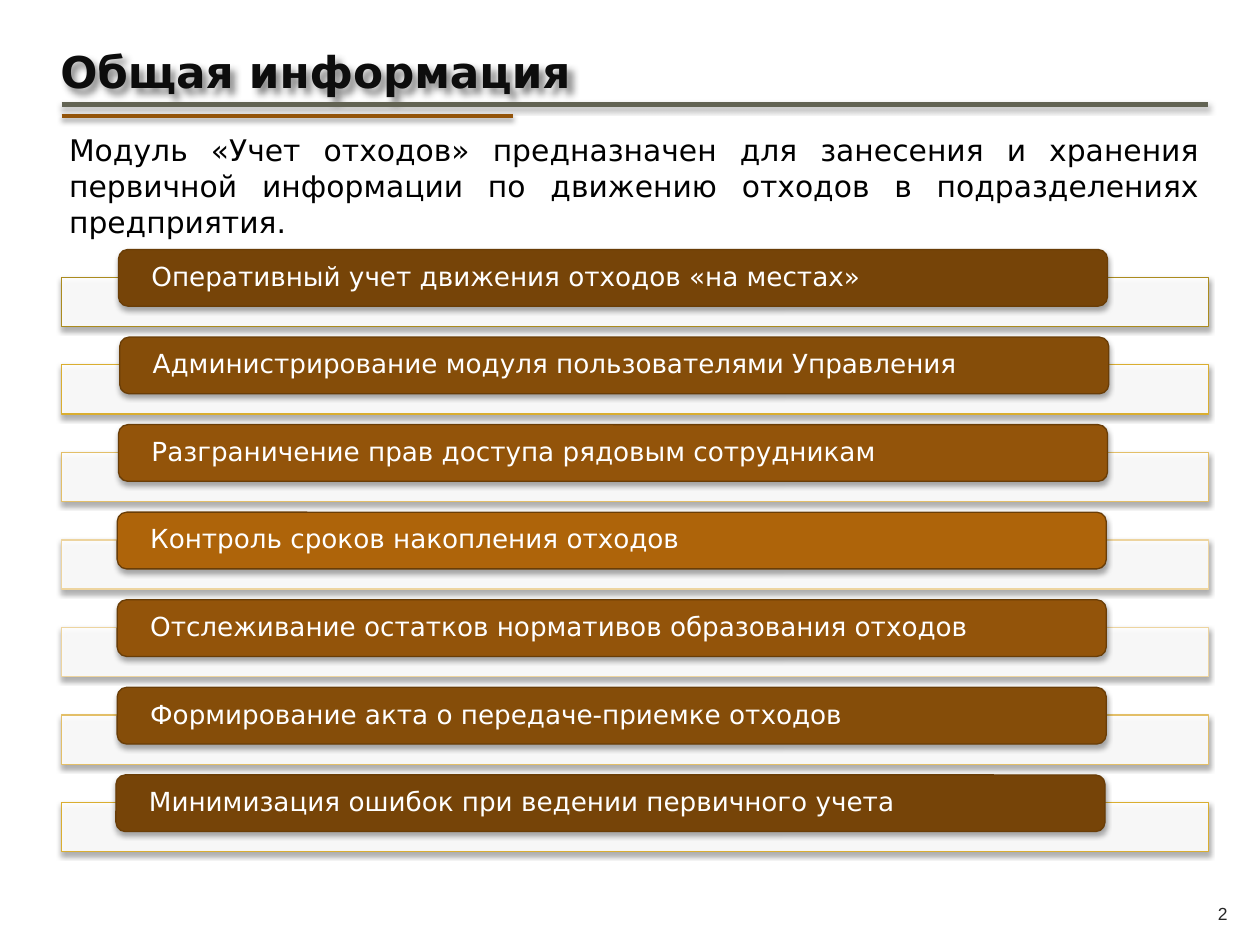
from dataclasses import dataclass

from lxml.etree import SubElement
from pptx import Presentation
from pptx.dml.color import RGBColor
from pptx.enum.shapes import MSO_CONNECTOR, MSO_SHAPE
from pptx.enum.text import MSO_ANCHOR, PP_ALIGN
from pptx.oxml.ns import qn
from pptx.util import Inches, Pt


@dataclass(frozen=True)
class Theme:
    font: str = "DejaVu Sans"
    number_font: str = "Arial"
    title_size: float = 25
    intro_size: float = 17
    row_size: float = 15
    number_size: float = 10
    title: str = "0D0D0D"
    text: str = "000000"
    number: str = "262626"
    white: str = "FFFFFF"
    long_rule: str = "626353"
    short_rule: str = "93540A"
    bar_edge: str = "693D07"
    # From the outer rows to the middle one
    bars: tuple = ("764408", "854D09", "93540A", "AE640A")
    # From the first row to the last one
    tray_edges: tuple = ("AB8B1E", "DAAE30", "E3BF68", "EDD49F",
                         "EDD49F", "E3BF68", "DAAE30")


@dataclass(frozen=True)
class Box:
    """An area of the page, in inches."""
    left: float
    top: float
    width: float
    height: float

    def emu(self):
        return [Inches(v) for v in (self.left, self.top, self.width, self.height)]


THEME = Theme()

# Each row: its text and the left edge of its bar
ROWS = [
    ("Оперативный учет движения отходов «на местах»", 0.94),
    ("Администрирование модуля пользователями Управления", 0.95),
    ("Разграничение прав доступа рядовым сотрудникам", 0.94),
    ("Контроль сроков накопления отходов", 0.93),
    ("Отслеживание остатков нормативов образования отходов", 0.93),
    ("Формирование акта о передаче-приемке отходов", 0.93),
    ("Минимизация ошибок при ведении первичного учета", 0.92),
]


def add_shadow(shape, angle=90, alpha=35, blur=3.1, distance=1.8):
    """Give a shape or connector a soft black shadow."""
    properties = shape._element.spPr
    effects = properties.find(qn("a:effectLst"))
    if effects is None:
        effects = SubElement(properties, qn("a:effectLst"))
    outer = SubElement(effects, qn("a:outerShdw"), {
        "blurRad": str(Pt(blur)), "dist": str(Pt(distance)),
        "dir": str(angle * 60000), "rotWithShape": "0"})
    color = SubElement(outer, qn("a:srgbClr"), val="000000")
    SubElement(color, qn("a:alpha"), val=str(alpha * 1000))


def write(shape, text, size, color, font=THEME.font, bold=False,
          align=PP_ALIGN.LEFT, line_spacing=None, **frame_format):
    frame = shape.text_frame
    for name, value in {"word_wrap": True, **frame_format}.items():
        setattr(frame, name, value)
    para = frame.paragraphs[0]
    para.alignment = align
    if line_spacing:
        para.line_spacing = line_spacing
    span = para.add_run()
    span.text = text
    for name, value in {"name": font, "size": Pt(size), "bold": bold}.items():
        setattr(span.font, name, value)
    span.font.color.rgb = RGBColor.from_string(color)


def add_panel(page, kind, box, fill, edge):
    shape = page.shapes.add_shape(kind, *box.emu())
    shape.fill.solid()
    shape.fill.fore_color.rgb = RGBColor.from_string(fill)
    shape.line.color.rgb = RGBColor.from_string(edge)
    shape.line.width = Pt(0.75)
    shape.shadow.inherit = False
    add_shadow(shape)
    return shape


def add_rule(page, left, top, width, color, weight):
    rule = page.shapes.add_connector(
        MSO_CONNECTOR.STRAIGHT, Inches(left), Inches(top),
        Inches(left + width), Inches(top))
    rule.line.color.rgb = RGBColor.from_string(color)
    rule.line.width = Pt(weight)
    add_shadow(rule)


def add_header(page, box, title):
    # Title with a shadow on its letters
    title_box = Box(box.left - 0.11, box.top, box.width / 2, 0.52)
    shape = page.shapes.add_textbox(*title_box.emu())
    write(shape, title, THEME.title_size, THEME.title, bold=True, word_wrap=False)
    add_shadow(shape, angle=45, alpha=45, blur=4, distance=4)
    # Two rules under the title
    bottom = box.top + box.height
    add_rule(page, box.left, bottom - 0.09, box.width, THEME.long_rule, 3)
    add_rule(page, box.left, bottom, 3.58, THEME.short_rule, 2.5)


def add_intro(page, box, text):
    shape = page.shapes.add_textbox(*box.emu())
    write(shape, text, THEME.intro_size, THEME.text, align=PP_ALIGN.JUSTIFY)


def add_rows(page, box, rows):
    bar_height, tray_height = 0.45, 0.39
    tray_drop = 0.22
    row_height = tray_drop + tray_height
    pitch = (box.height - row_height) / (len(rows) - 1)
    for index, (text, bar_left) in enumerate(rows):
        top = box.top + index * pitch
        # Pale tray across the full width
        tray = add_panel(page, MSO_SHAPE.RECTANGLE,
                         Box(box.left, top + tray_drop, box.width, tray_height),
                         THEME.white, THEME.tray_edges[index])
        color = tray._element.spPr.find(qn("a:solidFill"))[0]
        SubElement(color, qn("a:alpha"), val="90000")
        # Brown bar with the text, lighter towards the middle row
        shade = THEME.bars[min(index, len(rows) - 1 - index)]
        bar = add_panel(page, MSO_SHAPE.ROUNDED_RECTANGLE,
                        Box(bar_left, top, 7.85, bar_height),
                        shade, THEME.bar_edge)
        write(bar, text, THEME.row_size, THEME.white, line_spacing=0.9,
              vertical_anchor=MSO_ANCHOR.MIDDLE,
              margin_left=Inches(0.24), margin_right=Inches(0.24),
              margin_top=0, margin_bottom=0)


def add_page_number(page, box, number):
    shape = page.shapes.add_textbox(*box.emu())
    write(shape, number, THEME.number_size, THEME.number, font=THEME.number_font,
          align=PP_ALIGN.CENTER, vertical_anchor=MSO_ANCHOR.MIDDLE)


def main():
    deck = Presentation()
    deck.slide_width, deck.slide_height = Inches(10), Inches(7.5)
    page = deck.slides.add_slide(deck.slide_layouts[6])

    add_page_number(page, Box(9.45, 7.05, 0.51, 0.4), "2")
    add_header(page, Box(0.49, 0.31, 9.1, 0.61), "Общая информация")
    add_intro(page, Box(0.45, 1, 9.17, 0.96),
              "Модуль «Учет отходов» предназначен для занесения и хранения "
              "первичной информации по движению отходов в подразделениях "
              "предприятия.")
    add_rows(page, Box(0.49, 1.98, 9.1, 4.78), ROWS)

    deck.save("out.pptx")


if __name__ == "__main__":
    main()
